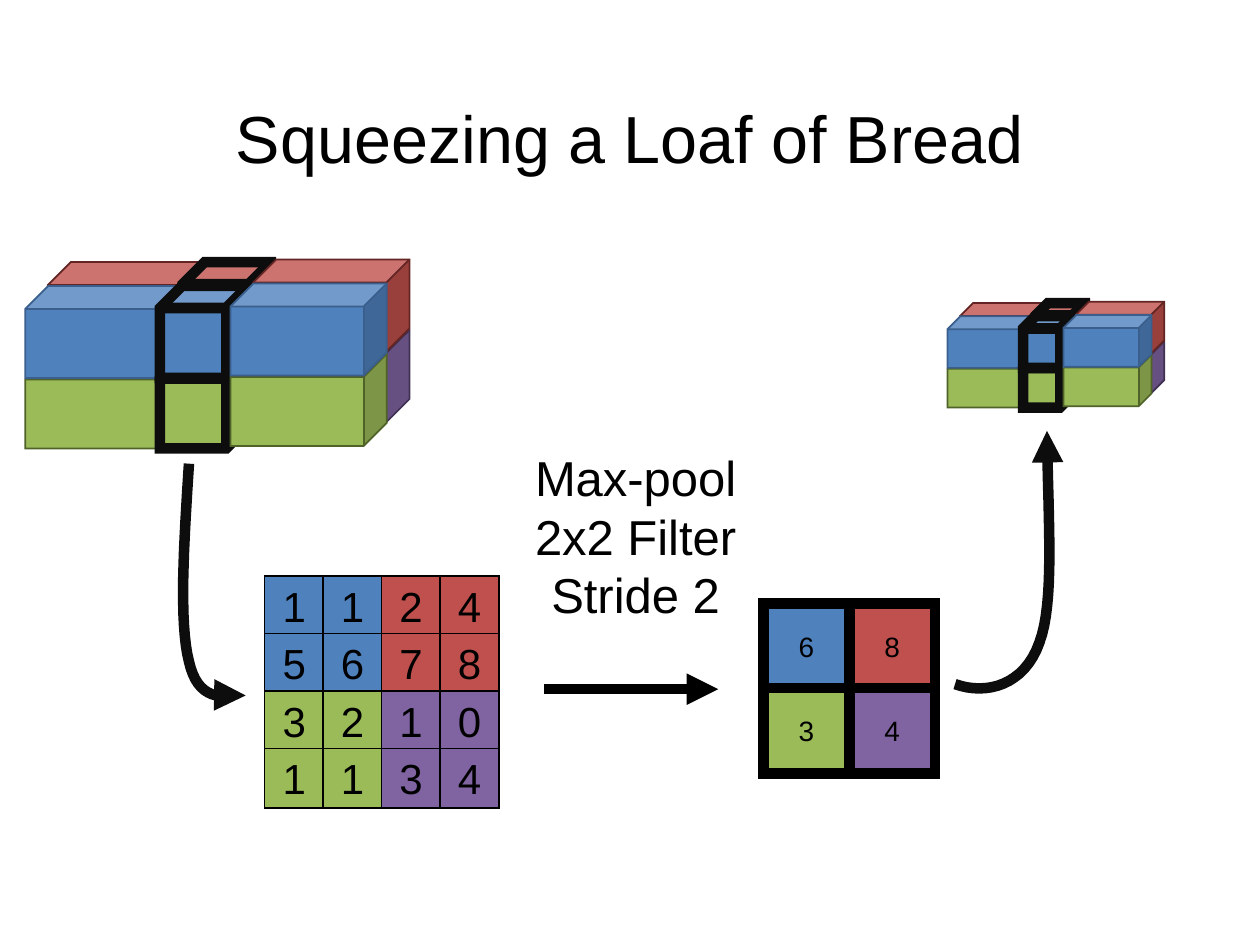
from lxml.etree import SubElement
from pptx import Presentation
from pptx.dml.color import RGBColor
from pptx.enum.shapes import MSO_CONNECTOR as CONNECTOR, MSO_SHAPE as SHAPE
from pptx.enum.text import MSO_ANCHOR as ANCHOR, MSO_AUTO_SIZE as AUTO_SIZE, PP_ALIGN as ALIGN
from pptx.oxml.ns import qn
from pptx.util import Inches, Pt

TITLE = "Squeezing a Loaf of Bread"
CAPTION = ["Max-pool", "2x2 Filter", "Stride 2"]
INPUT_VALUES = ["1124", "5678", "3210", "1134"]
POOLED_VALUES = ["68", "34"]
QUADRANTS = [["blue", "red"], ["green", "purple"]]
COLORS = {
    "blue": "4F81BD", "red": "C0504D", "green": "9BBB59", "purple": "8064A2",
    "blue edge": "3A5F8C", "red edge": "632523", "green edge": "4F6228",
    "purple edge": "403152", "slice": "0D0D0D", "black": "000000",
}
LARGE_LOAF = {
    "size": (1.24, 0.73), "slice_width": 0.7, "depth": (0.18, 0.19), "rise": 0.56,
    "fronts": [(0.2, 2.27), (1.27, 2.27), (1.83, 2.25)],
}
SMALL_LOAF = {
    "size": (0.7, 0.41), "slice_width": 0.39, "depth": (0.1, 0.105), "rise": 0.315,
    "fronts": [(7.52, 2.51), (8.12, 2.51), (8.44, 2.5)],
}
CURVE_DOWN = [(1.5, 3.68), (1.46, 4.31), (1.42, 4.94), (1.5, 5.25),
              (1.57, 5.56), (1.76, 5.54), (1.95, 5.52)]
CURVE_UP = [(7.58, 5.43), (7.83, 5.52), (8.13, 5.44), (8.25, 5.1),
            (8.37, 4.77), (8.32, 4.18), (8.31, 3.42)]
CURVE_STEPS = 16


def rgb(name):
    return RGBColor.from_string(COLORS[name])


def write_text(shape, lines, size, anchor=ANCHOR.MIDDLE, spacing=None):
    frame = shape.text_frame
    frame.word_wrap = True
    frame.vertical_anchor = anchor
    frame.text = "\n".join(lines)
    for paragraph in frame.paragraphs:
        paragraph.alignment = ALIGN.CENTER
        paragraph.line_spacing = spacing
        font = paragraph.runs[0].font
        font.name, font.size = "Arial", Pt(size)
        font.color.rgb = rgb("black")


def style_line(shape, color, width, arrow=False):
    shape.line.color.rgb = rgb(color)
    shape.line.width = Pt(width)
    outline = shape.line._get_or_add_ln()
    SubElement(outline, qn("a:miter"), lim="800000")
    if arrow:
        SubElement(outline, qn("a:tailEnd"), type="triangle")


def add_block(group, kind, box, fill, edge, width):
    shape = group.shapes.add_shape(kind, *map(Inches, box))
    shape.shadow.inherit = False
    shape.fill.solid()
    shape.fill.fore_color.rgb = rgb(fill)
    style_line(shape, edge, width)
    return shape


def add_loaf(group, size, slice_width, depth, rise, fronts):
    for index, (left, top) in enumerate(fronts):
        is_slice = index == 1
        width = slice_width if is_slice else size[0]
        for color, back, low in [("purple", 1, 1), ("green", 0, 1), ("red", 1, 0), ("blue", 0, 0)]:
            box = (left + back * depth[0], top - back * depth[1] + low * rise, width, size[1])
            edge = "slice" if is_slice else f"{color} edge"
            add_block(group, SHAPE.CUBE, box, color, edge, 6 if is_slice else 1)


def add_grid(group, values, origin, pitch, side, text_size, line_width):
    half = len(values) // 2
    for row, digits in enumerate(values):
        for column, digit in enumerate(digits):
            box = (origin[0] + column * pitch[0], origin[1] + row * pitch[1], side, side)
            fill = QUADRANTS[row // half][column // half]
            cell = add_block(group, SHAPE.RECTANGLE, box, fill, "black", line_width)
            write_text(cell, [digit], text_size)


def bezier(points, t):
    weights = ((1 - t) ** 3, 3 * t * (1 - t) ** 2, 3 * t * t * (1 - t), t ** 3)
    return tuple(Inches(sum(w * p[axis] for w, p in zip(weights, points))) for axis in (0, 1))


def add_curve(group, points):
    track = [bezier(points[start:start + 4], step / CURVE_STEPS)
             for start in (0, 3) for step in range(1, CURVE_STEPS + 1)]
    builder = group.shapes.build_freeform(*map(Inches, points[0]))
    builder.add_line_segments(track, close=False)
    curve = builder.convert_to_shape()
    curve.shadow.inherit = False
    curve.fill.background()
    style_line(curve, "slice", 6, arrow=True)


def main():
    """Build the max-pooling slide."""
    presentation = Presentation()
    presentation.slide_width, presentation.slide_height = Inches(10), Inches(7.5)
    slide = presentation.slides.add_slide(presentation.slide_layouts[5])
    title = slide.shapes.title
    title.left, title.top, title.width, title.height = map(Inches, (0.69, 0.4, 8.62, 1.45))
    write_text(title, [TITLE], 38, spacing=0.9)

    large_loaf, pooling, matrix, small_loaf = [slide.shapes.add_group_shape() for _ in range(4)]
    add_loaf(large_loaf, **LARGE_LOAF)

    add_grid(pooling, POOLED_VALUES, (6.06, 4.79), (0.68, 0.67), 0.68, 16, 6)
    arrow = pooling.shapes.add_connector(
        CONNECTOR.STRAIGHT, *map(Inches, (4.32, 5.47, 5.7, 5.47)))
    style_line(arrow, "black", 6, arrow=True)
    SubElement(arrow._element.spPr, qn("a:effectLst"))
    caption = pooling.shapes.add_textbox(*map(Inches, (4.13, 3.5, 1.83, 1.51)))
    write_text(caption, CAPTION, 28, anchor=ANCHOR.TOP)
    caption.text_frame.auto_size = AUTO_SIZE.SHAPE_TO_FIT_TEXT

    add_grid(matrix, INPUT_VALUES, (2.1, 4.57), (0.464, 0.457), 0.47, 24, 1)
    add_curve(matrix, CURVE_DOWN)

    add_loaf(small_loaf, **SMALL_LOAF)
    add_curve(small_loaf, CURVE_UP)
    presentation.save("out.pptx")


if __name__ == "__main__":
    main()
